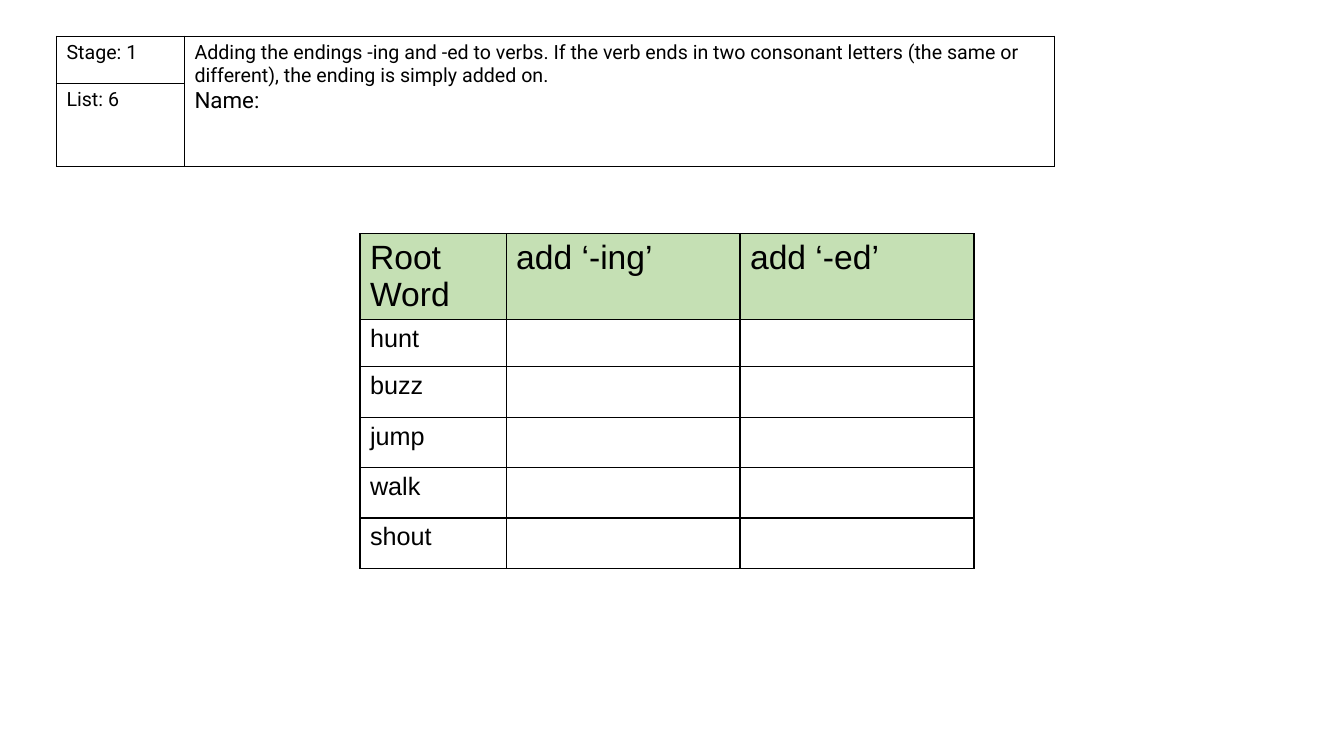
from dataclasses import dataclass

import lxml.etree
import pptx
import pptx.dml.color
import pptx.oxml.ns
import pptx.table
import pptx.util


@dataclass(frozen=True)
class Theme:
    ink: str = "000000"
    header_fill: str = "C5E0B4"
    border_width: float = 1
    info_font: str = "Roboto"
    words_font: str = "Arial"
    info_size: int = 14
    name_size: int = 16
    header_size: int = 24
    word_size: int = 18


@dataclass(frozen=True)
class Grid:
    left: float
    top: float
    columns: tuple[float, ...]
    rows: tuple[float, ...]


THEME = Theme()
VERBS = ("hunt", "buzz", "jump", "walk", "shout")
HEADINGS = ("Root Word", "add ‘-ing’", "add ‘-ed’")
RULE = (
    "Adding the endings -ing and -ed to verbs. If the verb ends in two consonant "
    "letters (the same or different), the ending is simply added on."
)
INFO_GRID = Grid(0.56, 0.36, (1.27, 8.63), (0.47, 0.82))
WORDS_GRID = Grid(3.57, 2.32, (1.45, 2.32, 2.32), (0.85, 0.47) + (0.5,) * 4)


def write(cell: pptx.table._Cell, text: str, *, font: str, size: int,
          new_paragraph: bool = False) -> None:
    frame = cell.text_frame
    paragraph = frame.add_paragraph() if new_paragraph else frame.paragraphs[0]
    run = paragraph.add_run()
    run.text = text
    run.font.name = font
    run.font.size = pptx.util.Pt(size)
    run.font.color.rgb = pptx.dml.color.RGBColor.from_string(THEME.ink)


def add_borders(cell: pptx.table._Cell) -> None:
    qn = pptx.oxml.ns.qn
    properties = cell._tc.get_or_add_tcPr()
    width = str(int(pptx.util.Pt(THEME.border_width)))
    for side in ("a:lnL", "a:lnR", "a:lnT", "a:lnB"):
        border = lxml.etree.SubElement(properties, qn(side), w=width)
        fill = lxml.etree.SubElement(border, qn("a:solidFill"))
        lxml.etree.SubElement(fill, qn("a:srgbClr"), val=THEME.ink)


def add_grid(slide: pptx.slide.Slide, grid: Grid) -> pptx.table.Table:
    table = slide.shapes.add_table(
        len(grid.rows), len(grid.columns),
        pptx.util.Inches(grid.left), pptx.util.Inches(grid.top),
        pptx.util.Inches(sum(grid.columns)), pptx.util.Inches(sum(grid.rows)),
    ).table
    table.first_row = False
    table.horz_banding = False
    for column, width in zip(table.columns, grid.columns):
        column.width = pptx.util.Inches(width)
    for row, height in zip(table.rows, grid.rows):
        row.height = pptx.util.Inches(height)
    for cell in table.iter_cells():
        add_borders(cell)
        cell.fill.background()
    return table


def add_info(slide: pptx.slide.Slide) -> None:
    info = add_grid(slide, INFO_GRID)
    rule_cell = info.cell(0, 1)
    rule_cell.merge(info.cell(1, 1))
    for cell, text in ((info.cell(0, 0), "Stage: 1"),
                       (info.cell(1, 0), "List: 6"),
                       (rule_cell, RULE)):
        write(cell, text, font=THEME.info_font, size=THEME.info_size)
    write(rule_cell, "Name:", font=THEME.info_font, size=THEME.name_size,
          new_paragraph=True)


def add_words(slide: pptx.slide.Slide) -> None:
    words = add_grid(slide, WORDS_GRID)
    for column, heading in enumerate(HEADINGS):
        cell = words.cell(0, column)
        cell.fill.solid()
        cell.fill.fore_color.rgb = pptx.dml.color.RGBColor.from_string(THEME.header_fill)
        write(cell, heading, font=THEME.words_font, size=THEME.header_size)
    for row, verb in enumerate(VERBS, start=1):
        write(words.cell(row, 0), verb, font=THEME.words_font, size=THEME.word_size)


def main() -> None:
    presentation = pptx.Presentation()
    presentation.slide_width = pptx.util.Inches(13.33)
    presentation.slide_height = pptx.util.Inches(7.5)
    slide = presentation.slides.add_slide(presentation.slide_layouts[6])
    add_info(slide)
    add_words(slide)
    presentation.save("out.pptx")


if __name__ == "__main__":
    main()
